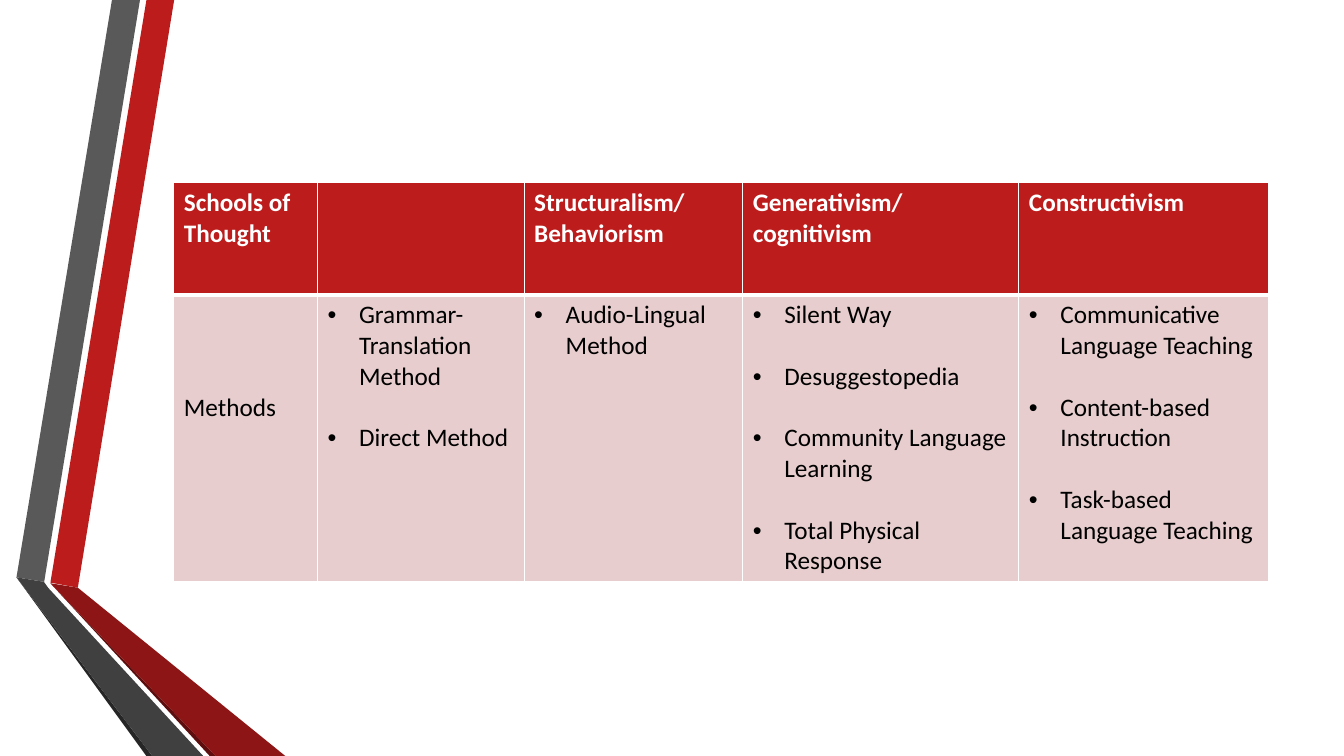
"""Build a slide with a table of teaching methods by school of thought."""
from lxml import etree
from pptx import Presentation
from pptx.dml.color import RGBColor
from pptx.oxml.ns import qn
from pptx.util import Pt

COLORS = {
    "red": "BC1C1C", "dark_red": "8D1515", "deep_red": "5E0E0E",
    "gray": "595959", "dark_gray": "404040", "deep_gray": "262626",
    "pink": "E7CDCD", "white": "FFFFFF", "black": "000000",
}
FONT = "Calibri"
FONT_SIZE = 18
LINE_HEIGHT = 22
BULLET_INDENT = 22.5
CELL_MARGIN = 3.6
SLIDE_SIZE = (960, 540)

RIBBONS = [
    ("red", [(36, 416.2), (55.6, 419.8), (124.4, 0), (104.6, 0)]),
    ("gray", [(100, 0), (80, 0), (11.8, 412.4), (31.6, 415.6)]),
    ("deep_gray", [(11.8, 412.4), (104.6, 540), (108.8, 540)]),
    ("deep_red", [(36, 416.6), (149.8, 540), (154, 540)]),
    ("dark_red", [(36, 416.6), (154, 540), (203.8, 540), (55.6, 419.8)]),
    ("dark_gray", [(145.2, 540), (34.4, 419.8), (31.4, 415.6), (11.8, 412.4), (108.8, 540)]),
]
TABLE_ORIGIN = (124.2, 130.5)
COLUMN_WIDTHS = [102.6, 147.6, 156.2, 197.2, 178.2]
ROW_HEIGHTS = [80, 204]
HEADERS = [
    ["Schools of Thought"],
    [],
    ["Structuralism/", "Behaviorism"],
    ["Generativism/", "cognitivism"],
    ["Constructivism"],
]
ROW_LABEL = "Methods"
ROW_LABEL_LINES_ABOVE = 3
METHODS = [
    ["Grammar-Translation Method", "Direct Method"],
    ["Audio-Lingual Method"],
    ["Silent Way", "Desuggestopedia", "Community Language Learning",
     "Total Physical Response"],
    ["Communicative Language Teaching", "Content-based Instruction",
     "Task-based Language Teaching"],
]


def color(name):
    return RGBColor.from_string(COLORS[name])


def add_ribbon(slide, fill, points):
    corners = [(Pt(x), Pt(y)) for x, y in points]
    builder = slide.shapes.build_freeform(*corners[0])
    builder.add_line_segments(corners[1:], close=True)
    shape = builder.convert_to_shape()
    shape.shadow.inherit = False
    shape.fill.solid()
    shape.fill.fore_color.rgb = color(fill)
    shape.line.fill.background()


def add_borders(cell, bottom_width):
    properties = cell._tc.get_or_add_tcPr()
    for side, width in (("L", 1), ("R", 1), ("T", 1), ("B", bottom_width)):
        line = etree.SubElement(properties, qn(f"a:ln{side}"), w=str(Pt(width)))
        fill = etree.SubElement(line, qn("a:solidFill"))
        etree.SubElement(fill, qn("a:srgbClr"), val=COLORS["white"])


def add_bullet(paragraph):
    properties = paragraph._p.get_or_add_pPr()
    properties.set("marL", str(Pt(BULLET_INDENT)))
    properties.set("indent", str(-Pt(BULLET_INDENT)))
    etree.SubElement(properties, qn("a:buFont"), typeface="Arial")
    etree.SubElement(properties, qn("a:buChar"), char="•")


def fill_cell(cell, lines, header=False, bulleted=False):
    add_borders(cell, 3 if header else 1)
    cell.fill.solid()
    cell.fill.fore_color.rgb = color("red" if header else "pink")
    cell.margin_top = cell.margin_bottom = Pt(CELL_MARGIN)
    for index, text in enumerate(lines):
        frame = cell.text_frame
        paragraph = frame.add_paragraph() if index else frame.paragraphs[0]
        if bulleted:
            paragraph.space_before = Pt(LINE_HEIGHT if index else 0)
            add_bullet(paragraph)
        run = paragraph.add_run()
        run.text = text
        run.font.name = FONT
        run.font.size = Pt(FONT_SIZE)
        run.font.bold = header
        run.font.color.rgb = color("white" if header else "black")


def add_methods_table(slide):
    frame = slide.shapes.add_table(
        len(ROW_HEIGHTS), len(COLUMN_WIDTHS), *map(Pt, TABLE_ORIGIN),
        Pt(sum(COLUMN_WIDTHS)), Pt(sum(ROW_HEIGHTS)))
    table = frame.table
    for column, width in zip(table.columns, COLUMN_WIDTHS):
        column.width = Pt(width)
    for row, height in zip(table.rows, ROW_HEIGHTS):
        row.height = Pt(height)
    for index, lines in enumerate(HEADERS):
        fill_cell(table.cell(0, index), lines, header=True)
    label_cell = table.cell(1, 0)
    fill_cell(label_cell, [ROW_LABEL])
    label_cell.margin_top = Pt(CELL_MARGIN + ROW_LABEL_LINES_ABOVE * LINE_HEIGHT)
    for index, lines in enumerate(METHODS, start=1):
        fill_cell(table.cell(1, index), lines, bulleted=True)


def main():
    presentation = Presentation()
    presentation.slide_width, presentation.slide_height = map(Pt, SLIDE_SIZE)
    slide = presentation.slides.add_slide(presentation.slide_layouts[6])
    for fill, points in RIBBONS:
        add_ribbon(slide, fill, points)
    add_methods_table(slide)
    presentation.save("out.pptx")


if __name__ == "__main__":
    main()
